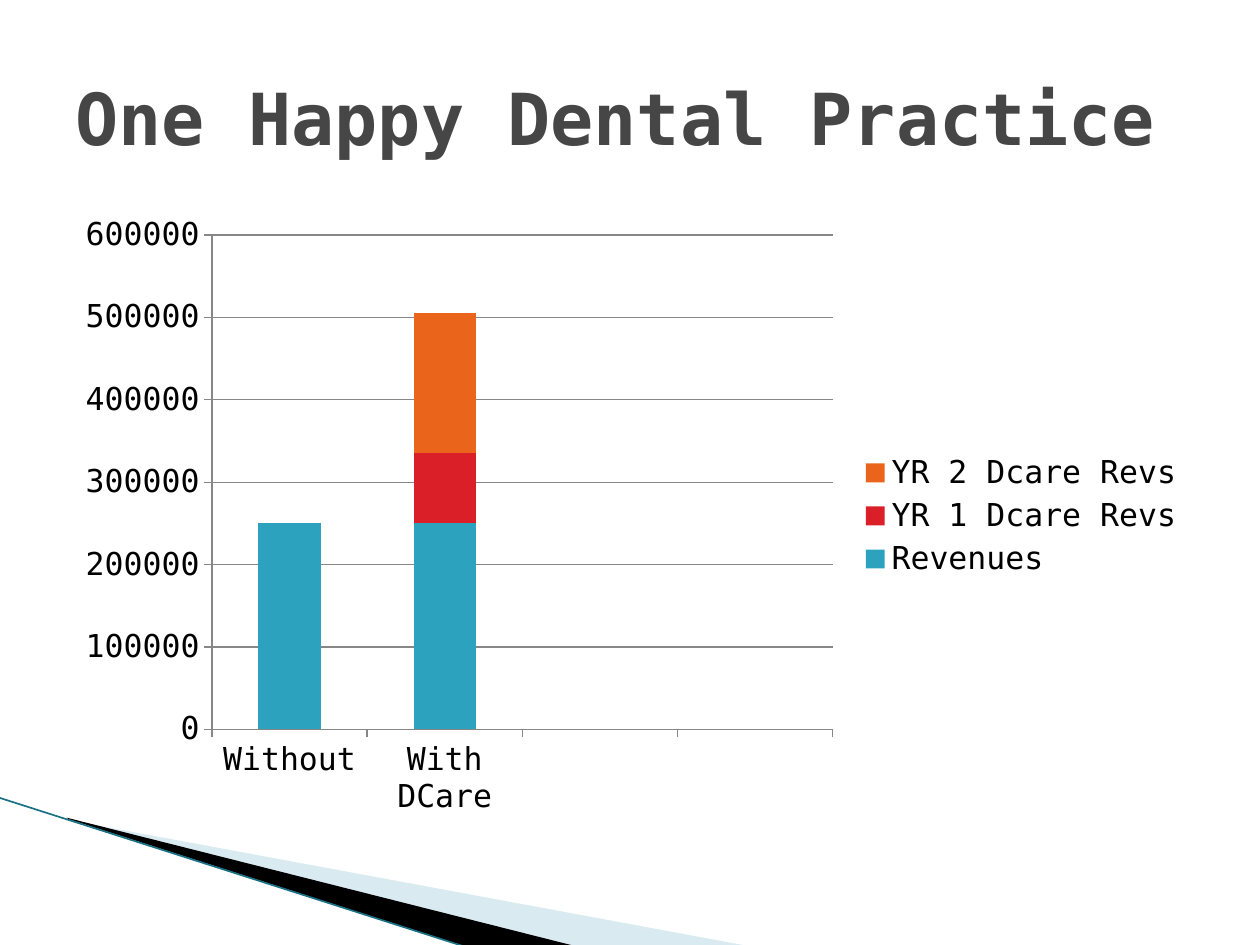
from lxml.etree import SubElement
from pptx import Presentation
from pptx.chart.data import CategoryChartData
from pptx.dml.color import RGBColor
from pptx.enum.chart import XL_CHART_TYPE, XL_LEGEND_POSITION, XL_TICK_MARK
from pptx.enum.shapes import MSO_CONNECTOR
from pptx.enum.text import MSO_ANCHOR, PP_ALIGN
from pptx.oxml.ns import qn
from pptx.util import Inches, Pt

TITLE = "One Happy Dental Practice"
CATEGORIES = ["Without", "With DCare", "", ""]
SERIES = [
    ("Revenues", (250000, 250000, None, None), "2DA2BF"),
    ("YR 1 Dcare Revs", (None, 85000, None, None), "DA1F28"),
    ("YR 2 Dcare Revs", (None, 170000, None, None), "EB641B"),
]
# Corner wedges: outline, colour, opacity in percent
WEDGES = [
    ([(0.55, 6.51), (5.95, 7.51), (4.56, 7.51), (0.55, 6.5)], "A0CBDC", 40),
    ([(0.53, 6.49), (4.57, 7.51), (3.72, 7.52), (0.54, 6.5)], "000000", 100),
]
EDGE = [(-0.01, 6.33), (3.71, 7.52)]
THEME = {
    "font": "DejaVu Sans Mono", "title_size": 41, "chart_size": 18,
    "title": "464646", "text": "000000", "grid": "878787", "edge": "1A7085",
}


def rgb(value):
    return RGBColor.from_string(value)


def set_font(font, size, color, bold=False):
    font.name, font.size, font.bold = THEME["font"], Pt(size), bold
    font.color.rgb = rgb(color)


def add_wedge(s, points, color, opacity):
    start, *rest = [(Inches(x), Inches(y)) for x, y in points]
    builder = s.shapes.build_freeform(*start)
    builder.add_line_segments(rest, close=True)
    sp = builder.convert_to_shape()
    sp.shadow.inherit = False
    sp.line.fill.background()
    sp.fill.solid()
    sp.fill.fore_color.rgb = rgb(color)
    if opacity < 100:
        clr = sp._element.spPr.find(qn("a:solidFill"))[0]
        SubElement(clr, qn("a:alpha"), val=str(opacity * 1000))


prs = Presentation()
prs.slide_width, prs.slide_height = Inches(10), Inches(7.5)
s = prs.slides.add_slide(prs.slide_layouts[5])

# Corner decoration
for wedge in WEDGES:
    add_wedge(s, *wedge)
ends = [Inches(v) for point in EDGE for v in point]
edge = s.shapes.add_connector(MSO_CONNECTOR.STRAIGHT, *ends)
edge.line.color.rgb = rgb(THEME["edge"])
edge.line.width = Pt(0.95)
SubElement(edge._element.spPr, qn("a:effectLst"))

# Stacked revenue chart
data = CategoryChartData(number_format="General")
data.categories = CATEGORIES
for name, values, _ in SERIES:
    data.add_series(name, values)
chart = s.shapes.add_chart(
    XL_CHART_TYPE.COLUMN_STACKED, Inches(0.5), Inches(1.62),
    Inches(9), Inches(4.95), data).chart
set_font(chart.font, THEME["chart_size"], THEME["text"])
chart.has_title = False
chart.has_legend = True
chart.legend.position = XL_LEGEND_POSITION.RIGHT
chart.legend.include_in_layout = False

plot = chart.plots[0]
plot.gap_width, plot.overlap = 150, 100
plot.vary_by_categories = False
for series, (_, _, color) in zip(plot.series, SERIES):
    series.format.fill.solid()
    series.format.fill.fore_color.rgb = rgb(color)

val_axis = chart.value_axis
val_axis.minimum_scale, val_axis.maximum_scale = 0, 600000
val_axis.major_unit = 100000
val_axis.has_major_gridlines = True
for axis in (chart.category_axis, val_axis):
    axis.major_tick_mark = XL_TICK_MARK.OUTSIDE
for lined in (chart.category_axis, val_axis, val_axis.major_gridlines):
    lined.format.line.color.rgb = rgb(THEME["grid"])
    lined.format.line.width = Pt(0.75)

# Title
title = s.shapes.title
title.left, title.top = Inches(0.5), Inches(0.3)
title.width, title.height = Inches(9), Inches(1.25)
tf = title.text_frame
tf.text = TITLE
tf.vertical_anchor = MSO_ANCHOR.MIDDLE
p = tf.paragraphs[0]
p.alignment = PP_ALIGN.LEFT
set_font(p.runs[0].font, THEME["title_size"], THEME["title"], bold=True)

prs.save("out.pptx")
